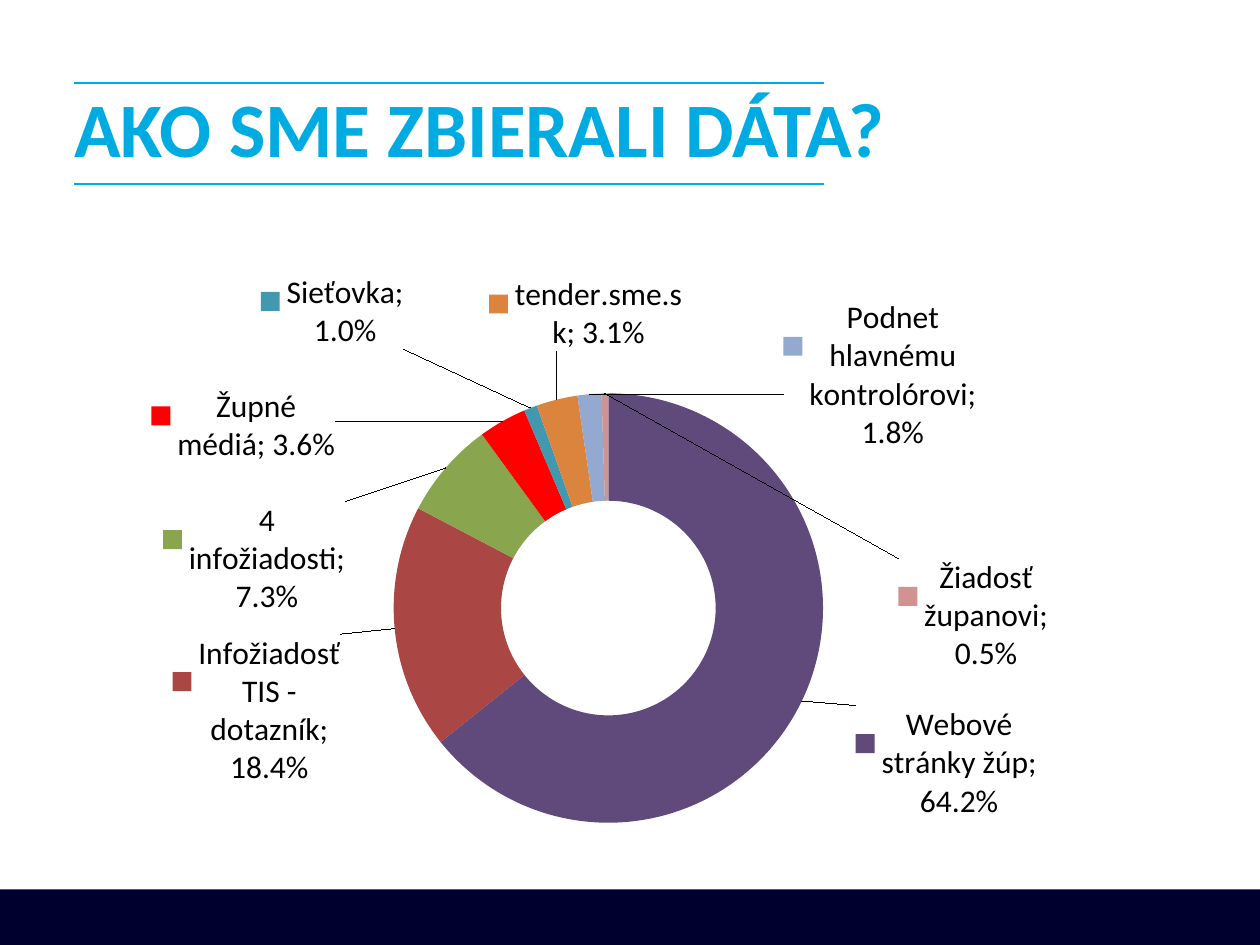
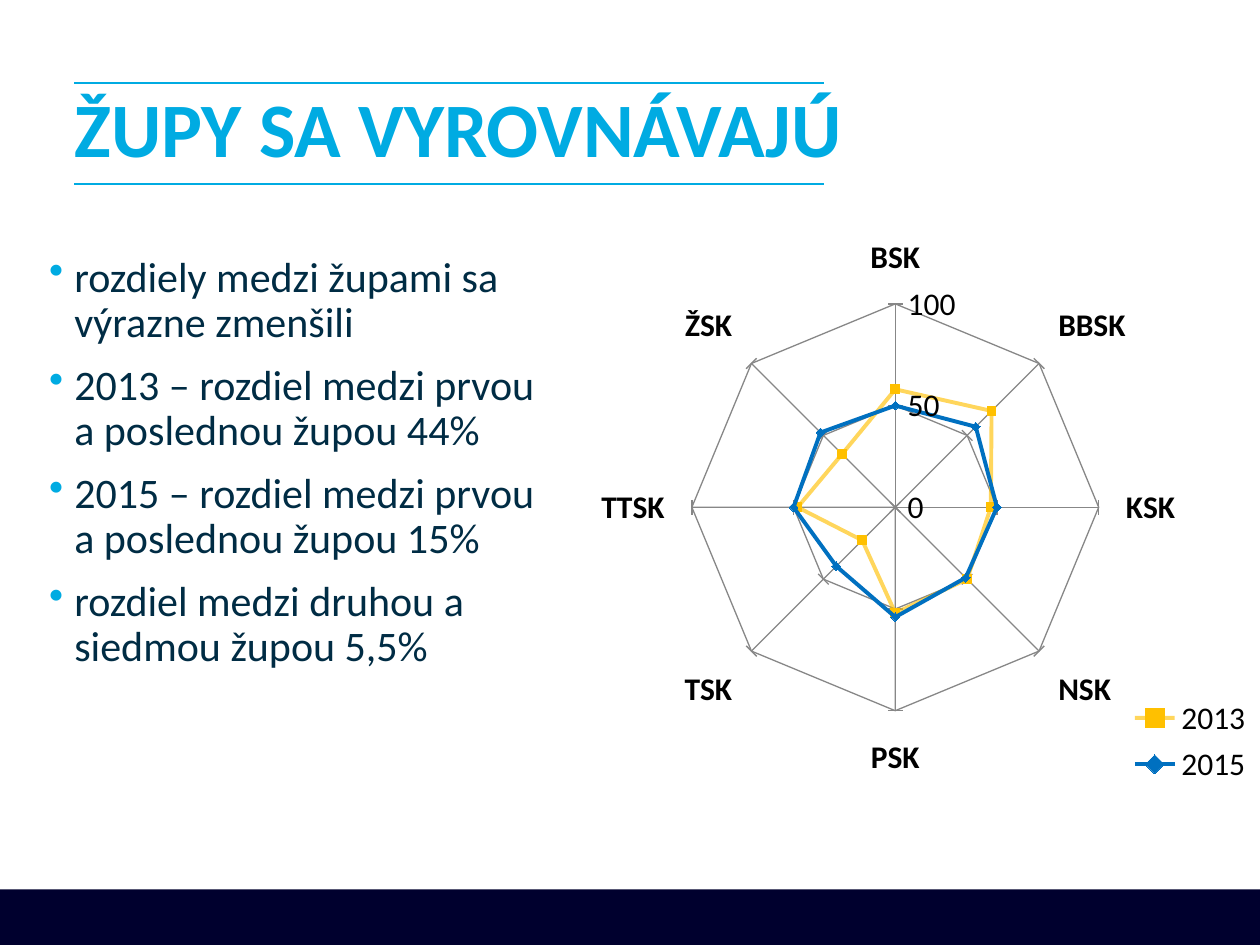
from dataclasses import dataclass
from itertools import accumulate
from math import cos, pi, sin

from lxml.etree import SubElement as Sub
from pptx import Presentation as Deck
from pptx.chart.data import CategoryChartData as Data
from pptx.dml.color import RGBColor as Rgb
from pptx.enum.chart import XL_CHART_TYPE as Kind
from pptx.enum.chart import XL_LEGEND_POSITION as Side
from pptx.enum.chart import XL_MARKER_STYLE as Mark
from pptx.enum.chart import XL_TICK_MARK as Tick
from pptx.enum.shapes import MSO_CONNECTOR as Line
from pptx.enum.shapes import MSO_SHAPE as Form
from pptx.enum.text import MSO_ANCHOR as Anchor
from pptx.enum.text import PP_ALIGN as Align
from pptx.oxml import parse_xml
from pptx.oxml.ns import nsdecls, qn
from pptx.util import Inches, Pt


@dataclass(frozen=True)
class Theme:
    font: str = "Calibri"
    sky: str = "00ABE2"
    navy: str = "00002E"
    ink: str = "002C44"
    black: str = "000000"
    grid: str = "878787"
    gold: str = "FFC000"
    blue: str = "0070C0"
    ring: tuple = ("604A7B", "AA4643", "89A54E", "FF0000",
                   "4198AF", "DB843D", "93A9CF", "D19392")
    head: int = 44
    body: int = 24
    small: int = 18


class Page:
    """Draws styled elements on the current slide, on a grid of 100 columns and 75 rows."""

    def __init__(self, theme):
        self.look = theme
        self.deck = Deck()
        self.deck.slide_width, self.deck.slide_height = Inches(10), Inches(7.5)
        self.cell = self.deck.slide_width / 100

    def span(self, *cells):
        return [round(n * self.cell) for n in cells]

    def style(self, font, size, color, bold=False):
        font.name, font.size, font.bold = self.look.font, Pt(size), bold
        font.color.rgb = Rgb.from_string(color)

    def start(self, title):
        self.slide = self.deck.slides.add_slide(self.deck.slide_layouts[5])
        self.band(0, 70.6, 100, 4.4)
        for row in (6.6, 14.6):
            self.rule(5.9, row, 65.4)
        self.title(title)

    def band(self, *box):
        shape = self.slide.shapes.add_shape(Form.RECTANGLE, *self.span(*box))
        shape.shadow.inherit = False
        shape.fill.solid()
        shape.fill.fore_color.rgb = Rgb.from_string(self.look.navy)
        shape.line.fill.background()

    def rule(self, left, row, right):
        line = self.slide.shapes.add_connector(
            Line.STRAIGHT, *self.span(left, row, right, row))
        line.line.color.rgb = Rgb.from_string(self.look.sky)
        line.line.width = Pt(1)
        Sub(line._element.spPr, qn("a:effectLst"))

    def frame(self, shape, right=0):
        text = shape.text_frame
        text.word_wrap = True
        text.margin_left = text.margin_top = text.margin_bottom = 0
        text.margin_right = Inches(right)
        return text

    def title(self, words):
        shape = self.slide.shapes.title
        shape.left, shape.top, shape.width, shape.height = self.span(5.9, 6.2, 69.3, 8.7)
        text = self.frame(shape)
        text.text = words
        text.vertical_anchor = Anchor.MIDDLE
        para = text.paragraphs[0]
        para.alignment, para.line_spacing = Align.LEFT, 0.9
        self.style(para.font, self.look.head, self.look.sky, True)

    def list(self, items, *box):
        text = self.frame(self.slide.shapes.add_textbox(*self.span(*box)), 0.1)
        for i, item in enumerate(items):
            para = text.add_paragraph() if i else text.paragraphs[0]
            para.text = item
            props = para._p.get_or_add_pPr()
            props.set("marL", str(Inches(0.2)))
            props.set("indent", str(-Inches(0.2)))
            Sub(Sub(props, qn("a:buClr")), qn("a:srgbClr"), val=self.look.sky)
            Sub(props, qn("a:buChar"), char="•")
            para.line_spacing = 0.9
            if i:
                para.space_before = Pt(10)
            self.style(para.font, self.look.body, self.look.ink)

    def chart(self, kind, cats, rows, box, form="General"):
        data = Data(number_format=form)
        data.categories = cats
        for name, vals in rows:
            data.add_series(name, vals)
        chart = self.slide.shapes.add_chart(kind, *self.span(*box), data).chart
        self.style(chart.font, self.look.small, self.look.black)
        chart.has_title = False
        chart.has_legend = False
        return chart

    def place(self, part, after, box, area, inner=False):
        """Pins a chart part to a box given in slide cells."""
        left, top, wide, high = area
        x, y, w, h = box
        share = {"x": (x - left) / wide, "y": (y - top) / high, "w": w / wide, "h": h / high}
        for old in part.findall(qn("c:layout")):
            part.remove(old)
        modes = '<c:layoutTarget val="inner"/>' if inner else ""
        modes += '<c:xMode val="edge"/><c:yMode val="edge"/>'
        sizes = "".join(f'<c:{k} val="{v:.3f}"/>' for k, v in share.items())
        node = parse_xml(f'<c:layout {nsdecls("c")}><c:manualLayout>'
                         f'{modes}{sizes}</c:manualLayout></c:layout>')
        spot = part.find(qn(after)) if after else None
        if spot is None:
            part.insert(0, node)
        else:
            spot.addnext(node)

    def ring(self, slices, area, hub, radius):
        cats, vals, spots = zip(*slices)
        chart = self.chart(Kind.DOUGHNUT, cats, [("Series 1", vals)], area, "0.0%")
        plot = chart.plots[0]
        plot.vary_by_categories = True
        plot._element.find(qn("c:holeSize")).set("val", "50")
        x, y = hub
        self.place(chart._chartSpace.chart.plotArea, None,
                   (x - radius, y - radius, 2 * radius, 2 * radius), area, True)
        series = plot.series[0]
        for i, color in enumerate(self.look.ring):
            fill = series.points[i].format.fill
            fill.solid()
            fill.fore_color.rgb = Rgb.from_string(color)
        flags = "".join(f'<c:{tag} val="{on}"/>' for tag, on in (
            ("showLegendKey", 1), ("showVal", 1), ("showCatName", 1), ("showSerName", 0),
            ("showPercent", 0), ("showBubbleSize", 0))) + "<c:separator>; </c:separator>"
        marks, total = "", sum(vals)
        for i, (val, end, spot) in enumerate(zip(vals, accumulate(vals), spots)):
            turn = 2 * pi * (end - val / 2) / total
            dx = (spot[0] - x - 0.75 * radius * sin(turn)) / area[2]
            dy = (spot[1] - y + 0.75 * radius * cos(turn)) / area[3]
            marks += (f'<c:dLbl><c:idx val="{i}"/><c:layout><c:manualLayout>'
                      f'<c:x val="{dx:.3f}"/><c:y val="{dy:.3f}"/>'
                      f'</c:manualLayout></c:layout>{flags}</c:dLbl>')
        labels = parse_xml(f'<c:dLbls {nsdecls("c")}>{marks}'
                           '<c:numFmt formatCode="0.0%" sourceLinked="0"/>'
                           f'{flags}<c:showLeaderLines val="1"/></c:dLbls>')
        series._element.find(qn("c:cat")).addprevious(labels)

    def radar(self, cats, rows, area, net, key):
        chart = self.chart(Kind.RADAR_MARKERS, cats, [row[:2] for row in rows], area)
        self.place(chart._chartSpace.chart.plotArea, None, net, area, True)
        for series, (_, _, color, mark, alpha) in zip(chart.plots[0].series, rows):
            series.smooth = False
            line = series.format.line
            line.width = Pt(2.25)
            line.color.rgb = Rgb.from_string(color)
            tint = next(line._ln.iter(qn("a:srgbClr")))
            Sub(tint, qn("a:alpha"), val=str(alpha * 1000))
            series.marker.style, series.marker.size = mark, 5
            face = series.marker.format
            face.fill.solid()
            face.fill.fore_color.rgb = Rgb.from_string(color)
            face.line.fill.background()
        names, scale = chart.category_axis, chart.value_axis
        self.style(names.tick_labels.font, self.look.small, self.look.black, True)
        scale.minimum_scale, scale.maximum_scale, scale.major_unit = 0, 100, 50
        scale.major_tick_mark = Tick.CROSS
        scale.tick_labels.number_format = "0"
        scale.tick_labels.number_format_is_linked = False
        scale.has_major_gridlines = True
        for part in (scale.major_gridlines, scale, names):
            part.format.line.color.rgb = Rgb.from_string(self.look.grid)
            part.format.line.width = Pt(0.75)
        chart.has_legend = True
        chart.legend.position, chart.legend.include_in_layout = Side.RIGHT, False
        self.place(chart.legend._element, "c:legendPos", key, area)


def main():
    look = Theme()
    page = Page(look)

    page.start("AKO SME ZBIERALI DÁTA?")
    page.ring([
        ("Webové stránky žúp", 0.642, (75.1, 60.6)),
        ("Infožiadosť TIS - dotazník", 0.184, (20.4, 56.4)),
        ("4 infožiadosti", 0.073, (20.2, 44.4)),
        ("Župné médiá", 0.036, (19.3, 33.8)),
        ("Sieťovka", 0.01, (26.4, 24.7)),
        ("tender.sme.sk", 0.031, (46.5, 24.9)),
        ("Podnet hlavnému kontrolórovi", 0.018, (69.9, 29.8)),
        ("Žiadosť županovi", 0.005, (77.3, 48.9)),
    ], (0, 17, 90, 53.5), (48.3, 48.3), 17.05)

    page.start("ŽUPY SA VYROVNÁVAJÚ")
    page.list([
        "rozdiely medzi župami sa výrazne zmenšili",
        "2013 – rozdiel medzi prvou a poslednou župou 44%",
        "2015 – rozdiel medzi prvou a poslednou župou 15%",
        "rozdiel medzi druhou a siedmou župou 5,5%",
    ], 3.9, 20.3, 41.4, 45.2)
    page.radar(
        ["BSK", "BBSK", "KSK", "NSK", "PSK", "TSK", "TTSK", "ŽSK"],
        [("2013", (58, 67, 47, 50, 52, 23, 48, 37), look.gold, Mark.SQUARE, 64),
         ("2015", (50, 56, 50, 49, 54, 41, 50, 52), look.blue, Mark.DIAMOND, 100)],
        (46, 17.2, 54, 46.1), (54.9, 24.1, 32.3, 32.3), (90, 54.8, 10, 8))

    page.deck.save("out.pptx")


if __name__ == "__main__":
    main()
